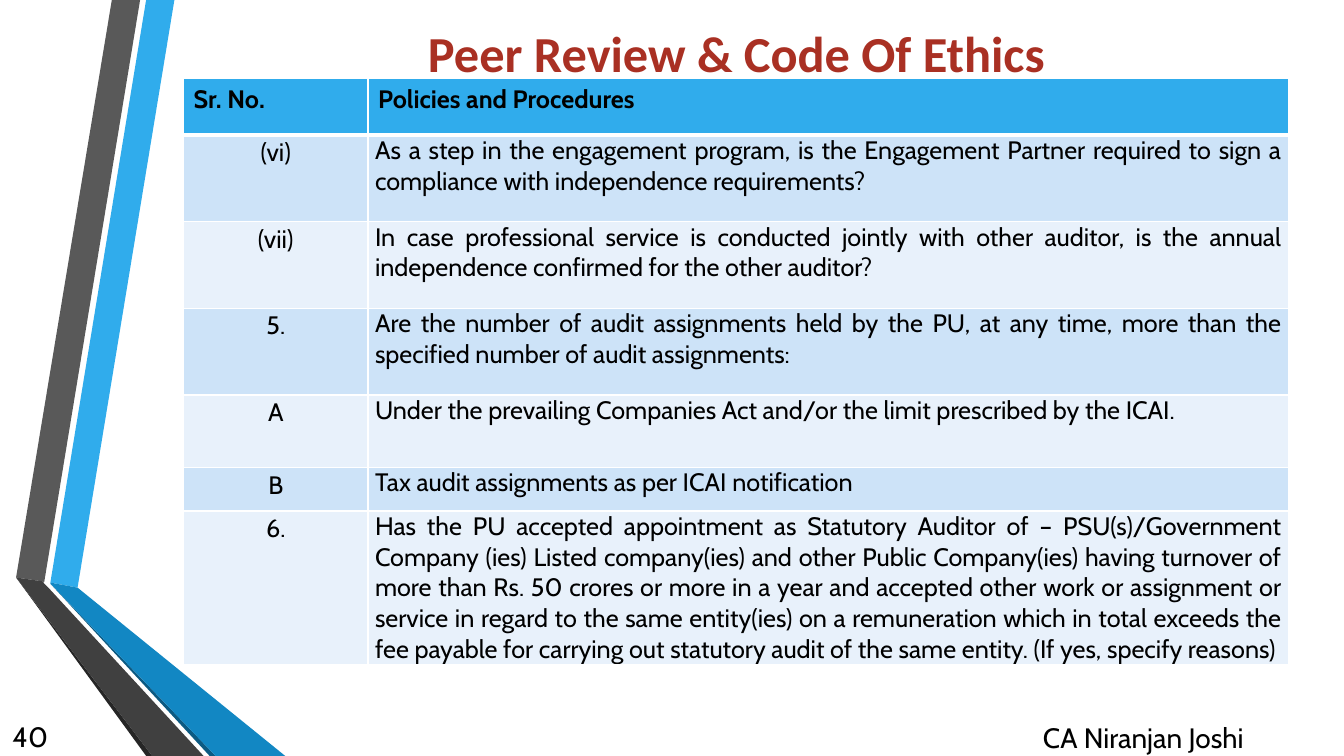
"""Build the Peer Review & Code Of Ethics slide with its policies table."""
from dataclasses import dataclass

from lxml.etree import SubElement
from pptx import Presentation
from pptx.dml.color import RGBColor
from pptx.enum.text import MSO_ANCHOR as Anchor, PP_ALIGN as Align
from pptx.oxml.ns import qn
from pptx.slide import Slide
from pptx.table import _Cell as Cell
from pptx.text.text import _Paragraph as Paragraph
from pptx.util import Inches, Pt

SKY = RGBColor(0x30, 0xAC, 0xEC)
GREY = RGBColor(0x59, 0x59, 0x59)
BLACK_GREY = RGBColor(0x26, 0x26, 0x26)
NAVY = RGBColor(0x0C, 0x5A, 0x82)
BLUE = RGBColor(0x12, 0x87, 0xC3)
DARK_GREY = RGBColor(0x40, 0x40, 0x40)
BRICK = RGBColor(0xA9, 0x30, 0x23)
BLACK = RGBColor(0, 0, 0)
ROW_TINTS = (RGBColor(0xCD, 0xE3, 0xF8), RGBColor(0xE8, 0xF1, 0xFB))


@dataclass(frozen=True)
class Ribbon:
    color: RGBColor
    points: tuple[tuple[float, float], ...]


@dataclass(frozen=True)
class Policy:
    number: str
    text: str
    height: float


@dataclass(frozen=True)
class Footer:
    text: str
    left: float
    width: float
    anchor: Anchor


RIBBONS = (
    Ribbon(SKY, ((0.5, 5.78), (0.77, 5.83), (1.73, 0), (1.45, 0))),
    Ribbon(GREY, ((1.39, 0), (1.11, 0), (0.16, 5.73), (0.44, 5.77))),
    Ribbon(BLACK_GREY, ((0.16, 5.73), (1.45, 7.5), (1.51, 7.5))),
    Ribbon(NAVY, ((0.5, 5.79), (2.08, 7.5), (2.14, 7.5))),
    Ribbon(BLUE, ((0.5, 5.79), (2.14, 7.5), (2.83, 7.5), (0.77, 5.83), (0.5, 5.78))),
    Ribbon(DARK_GREY, ((2.02, 7.5), (0.48, 5.83), (0.43, 5.78), (0.44, 5.77),
                       (0.16, 5.73), (1.51, 7.5))),
)

POLICIES = (
    Policy("(vi)", "As a step in the engagement program, is the Engagement Partner required "
           "to sign a compliance with independence requirements?", 0.86),
    Policy("(vii)", "In case professional service is conducted jointly with other auditor, "
           "is the annual independence confirmed for the other auditor?", 0.86),
    Policy("5.", "Are the number of audit assignments held by the PU, at any time, more than "
           "the specified number of audit assignments:", 0.86),
    Policy("A", "Under the prevailing Companies Act and/or the limit prescribed by the ICAI.", 0.72),
    Policy("B", "Tax audit assignments as per ICAI notification", 0.43),
    Policy("6.", "Has the PU accepted appointment as Statutory Auditor of – PSU(s)/Government "
           "Company (ies) Listed company(ies) and other Public Company(ies) having turnover of "
           "more than Rs. 50 crores or more in a year and accepted other work or assignment or "
           "service in regard to the same entity(ies) on a remuneration which in total exceeds "
           "the fee payable for carrying out statutory audit of the same entity. "
           "(If yes, specify reasons)", 0.86),
)

FOOTERS = (
    Footer("40", 0, 0.6, Anchor.MIDDLE),
    Footer("CA Niranjan Joshi", 9.59, 3.5, Anchor.TOP),
)


def style(paragraph: Paragraph, size: float, align: Align, bold: bool = False,
          face: str = "Cabin", color: RGBColor = BLACK) -> None:
    paragraph.alignment = align
    font = paragraph.font
    font.name, font.size, font.bold = face, Pt(size), bold
    font.color.rgb = color


def draw_ribbon(slide: Slide, ribbon: Ribbon) -> None:
    start, *rest = [(Inches(x), Inches(y)) for x, y in ribbon.points]
    outline = slide.shapes.build_freeform(*start)
    outline.add_line_segments(rest, close=True)
    band = outline.convert_to_shape()
    band.shadow.inherit = False
    band.fill.solid()
    band.fill.fore_color.rgb = ribbon.color
    band.line.fill.background()


def fill_cell(cell: Cell, text: str, fill: RGBColor, align: Align, header: bool = False) -> None:
    cell.text = text
    style(cell.text_frame.paragraphs[0], 18, align, bold=header)
    properties = cell._tc.get_or_add_tcPr()
    for side in "LRTB":
        width = 3 if header and side == "B" else 1
        border = SubElement(properties, qn(f"a:ln{side}"), w=str(Pt(width)))
        SubElement(SubElement(border, qn("a:solidFill")), qn("a:srgbClr"), val="FFFFFF")
    cell.fill.solid()
    cell.fill.fore_color.rgb = fill
    if not header:
        cell.margin_left = cell.margin_right = Inches(0.07)
        cell.margin_top = cell.margin_bottom = 0


def draw_policies(slide: Slide) -> None:
    table = slide.shapes.add_table(len(POLICIES) + 1, 2, Inches(1.82), Inches(0.78),
                                   Inches(10.96), Inches(5.15)).table
    for column, width in zip(table.columns, (1.83, 9.13)):
        column.width = Inches(width)
    table.rows[0].height = Inches(0.56)
    for column, heading in enumerate(("Sr. No.", "Policies and Procedures")):
        fill_cell(table.cell(0, column), heading, SKY, Align.LEFT, header=True)
    for row, policy in enumerate(POLICIES, start=1):
        table.rows[row].height = Inches(policy.height)
        tint = ROW_TINTS[(row - 1) % 2]
        number = table.cell(row, 0)
        fill_cell(number, policy.number, tint, Align.CENTER)
        number.text_frame.paragraphs[0].line_spacing = 1.07
        number.text_frame.paragraphs[0].space_after = Pt(8)
        fill_cell(table.cell(row, 1), policy.text, tint, Align.JUSTIFY)


def draw_footer(slide: Slide, footer: Footer) -> None:
    frame = slide.shapes.add_textbox(Inches(footer.left), Inches(7.1),
                                     Inches(footer.width), Inches(0.4)).text_frame
    frame.word_wrap = True
    frame.vertical_anchor = footer.anchor
    frame.text = footer.text
    style(frame.paragraphs[0], 20, Align.CENTER)


def main() -> None:
    deck = Presentation()
    deck.slide_width, deck.slide_height = Inches(13.33), Inches(7.5)
    slide = deck.slides.add_slide(deck.slide_layouts[5])
    for ribbon in RIBBONS:
        draw_ribbon(slide, ribbon)
    title = slide.shapes.title
    title.left, title.top = Inches(2.17), Inches(0.17)
    title.width, title.height = Inches(10.27), Inches(0.7)
    title.text_frame.text = "Peer Review & Code Of Ethics"
    title.text_frame.vertical_anchor = Anchor.MIDDLE
    style(title.text_frame.paragraphs[0], 36, Align.CENTER, True, "Calibri", BRICK)
    draw_policies(slide)
    for footer in FOOTERS:
        draw_footer(slide, footer)
    deck.save("out.pptx")


if __name__ == "__main__":
    main()
